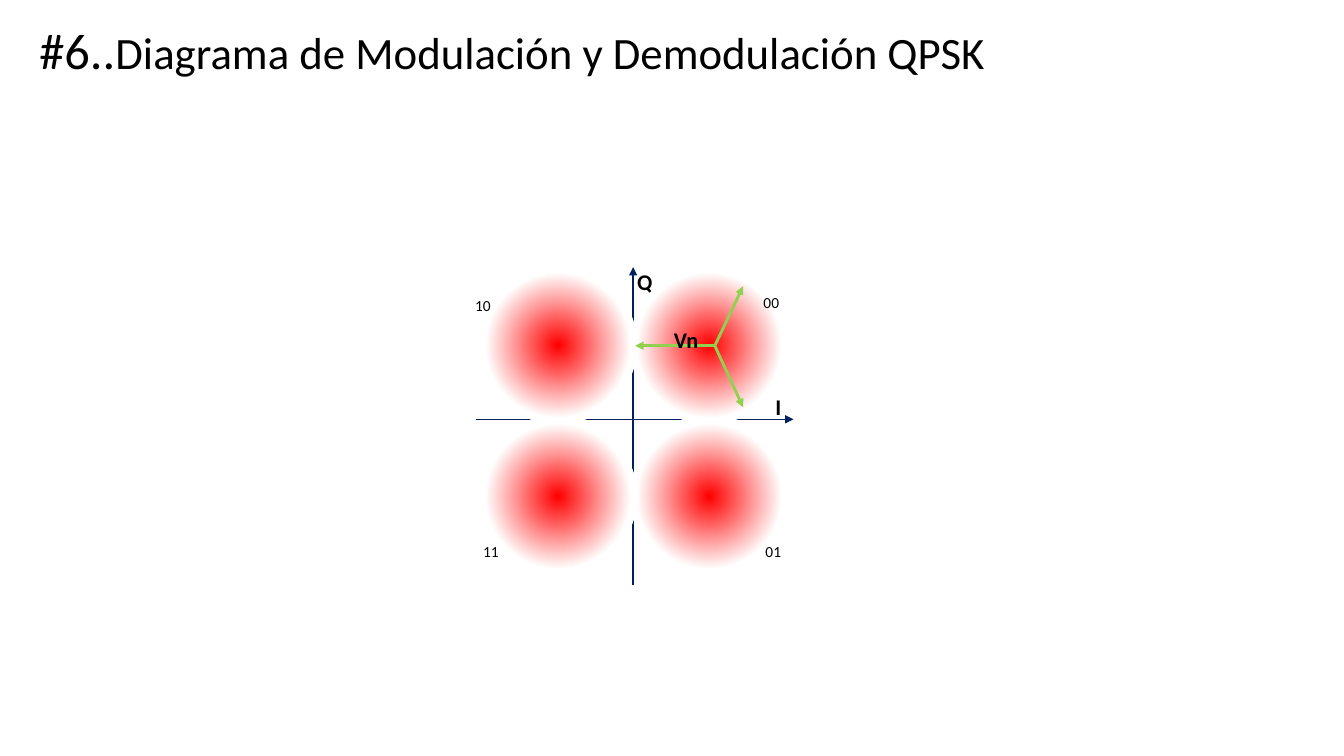
from dataclasses import dataclass
from itertools import product

import lxml.etree
import pptx
import pptx.dml.color
import pptx.enum.shapes
import pptx.enum.text
import pptx.oxml
import pptx.oxml.ns
import pptx.util

EMU_PER_PX = 9144  # 100 px to the inch


@dataclass(frozen=True)
class Theme:
    font: str = "Calibri"
    text: str = "000000"
    axis: str = "002060"
    noise: str = "92D050"
    core: str = "FF0000"
    edge: str = "FFFFFF"
    number_pt: int = 36
    title_pt: int = 32
    name_pt: int = 16
    bits_pt: int = 11
    axis_pt: int = 1
    noise_pt: int = 2


@dataclass(frozen=True)
class Label:
    text: str
    left: int
    top: int
    width: int
    height: int
    size: int
    bold: bool = False


@dataclass(frozen=True)
class Arrow:
    start: tuple[int, int]
    end: tuple[int, int]
    color: str
    weight: int


THEME = Theme()

AXES = [
    Arrow((628, 580), (628, 265), THEME.axis, THEME.axis_pt),
    Arrow((472, 416), (787, 416), THEME.axis, THEME.axis_pt),
]
NOISE_ORIGIN = (709, 343)
NOISE = [Arrow(NOISE_ORIGIN, tip, THEME.noise, THEME.noise_pt)
         for tip in ((630, 343), (737, 284), (737, 404))]

AXIS_NAMES = [
    Label("Q", 632, 266, 15, 27, THEME.name_pt, True),
    Label("I", 769, 390, 6, 27, THEME.name_pt, True),
]
BITS = [Label(text, left, top, 16, 19, THEME.bits_pt)
        for text, left, top in (("00", 757, 290), ("01", 759, 537),
                                ("11", 479, 537), ("10", 471, 293))]
NOISE_NAME = Label("Vn", 668, 323, 25, 27, THEME.name_pt, True)

CLOUD_LEFT, CLOUD_TOP, CLOUD_SIZE, CLOUD_PITCH = 475, 264, 157, 150


def px(n: int) -> pptx.util.Emu:
    return pptx.util.Emu(n * EMU_PER_PX)


def rgb(color: str) -> pptx.dml.color.RGBColor:
    return pptx.dml.color.RGBColor.from_string(color)


def format_run(r, size: int, bold: bool = False) -> None:
    r.font.name = THEME.font
    r.font.size = pptx.util.Pt(size)
    r.font.bold = bold
    r.font.color.rgb = rgb(THEME.text)


def set_title(slide) -> None:
    sp = slide.shapes.title
    sp.left, sp.top, sp.width, sp.height = px(29), px(14), px(1249), px(71)
    tf = sp.text_frame
    tf.word_wrap = True
    tf.auto_size = pptx.enum.text.MSO_AUTO_SIZE.SHAPE_TO_FIT_TEXT
    tf.vertical_anchor = pptx.enum.text.MSO_ANCHOR.TOP
    p = tf.paragraphs[0]
    p.alignment = pptx.enum.text.PP_ALIGN.LEFT
    for text, size in (("#6..", THEME.number_pt),
                       ("Diagrama de Modulación y Demodulación QPSK", THEME.title_pt)):
        r = p.add_run()
        r.text = text
        format_run(r, size)


def add_arrow(slide, arrow: Arrow) -> None:
    sp = slide.shapes.add_connector(pptx.enum.shapes.MSO_CONNECTOR.STRAIGHT,
                                    *map(px, arrow.start + arrow.end))
    sp.line.color.rgb = rgb(arrow.color)
    sp.line.width = pptx.util.Pt(arrow.weight)
    qn = pptx.oxml.ns.qn
    lxml.etree.SubElement(sp.line._get_or_add_ln(), qn("a:tailEnd"), type="triangle")
    lxml.etree.SubElement(sp._element.spPr, qn("a:effectLst"))


def add_label(slide, label: Label) -> None:
    sp = slide.shapes.add_textbox(px(label.left), px(label.top),
                                  px(label.width), px(label.height))
    tf = sp.text_frame
    tf.text = label.text
    tf.margin_left = tf.margin_top = tf.margin_right = tf.margin_bottom = 0
    tf.word_wrap = False
    tf.auto_size = pptx.enum.text.MSO_AUTO_SIZE.SHAPE_TO_FIT_TEXT
    tf.vertical_anchor = pptx.enum.text.MSO_ANCHOR.MIDDLE
    p = tf.paragraphs[0]
    p.alignment = pptx.enum.text.PP_ALIGN.CENTER
    format_run(p.runs[0], label.size, label.bold)


def radial_fill():
    """Return a gradient that fades from the core colour to the edge colour."""
    stops = "".join(
        f'<a:gs pos="{percent * 1000}"><a:srgbClr val="{color}"/></a:gs>'
        for percent, color in ((0, THEME.core), (65, THEME.edge),
                               (84, THEME.edge), (100, THEME.edge)))
    return pptx.oxml.parse_xml(
        f'<a:gradFill {pptx.oxml.ns.nsdecls("a")} rotWithShape="1">'
        f'<a:gsLst>{stops}</a:gsLst><a:path path="circle">'
        '<a:fillToRect l="50000" t="50000" r="50000" b="50000"/>'
        '</a:path></a:gradFill>')


def add_cloud(slide, col: int, row: int) -> None:
    """Add the noise cloud around one constellation point."""
    sp = slide.shapes.add_shape(
        pptx.enum.shapes.MSO_SHAPE.OVAL,
        px(CLOUD_LEFT + col * CLOUD_PITCH), px(CLOUD_TOP + row * CLOUD_PITCH),
        px(CLOUD_SIZE), px(CLOUD_SIZE))
    sp.rotation = 270
    sp.shadow.inherit = False
    sp.line.fill.background()
    sp._element.spPr.find(pptx.oxml.ns.qn("a:prstGeom")).addnext(radial_fill())


def main() -> None:
    prs = pptx.Presentation()
    prs.slide_width, prs.slide_height = px(1333), px(750)
    slide = prs.slides.add_slide(prs.slide_layouts.get_by_name("Title Only"))
    set_title(slide)
    for arrow in AXES:
        add_arrow(slide, arrow)
    for label in AXIS_NAMES:
        add_label(slide, label)
    for col, row in product(range(2), repeat=2):
        add_cloud(slide, col, row)
    for label in BITS:
        add_label(slide, label)
    for arrow in NOISE:
        add_arrow(slide, arrow)
    add_label(slide, NOISE_NAME)
    prs.save("out.pptx")


if __name__ == "__main__":
    main()
